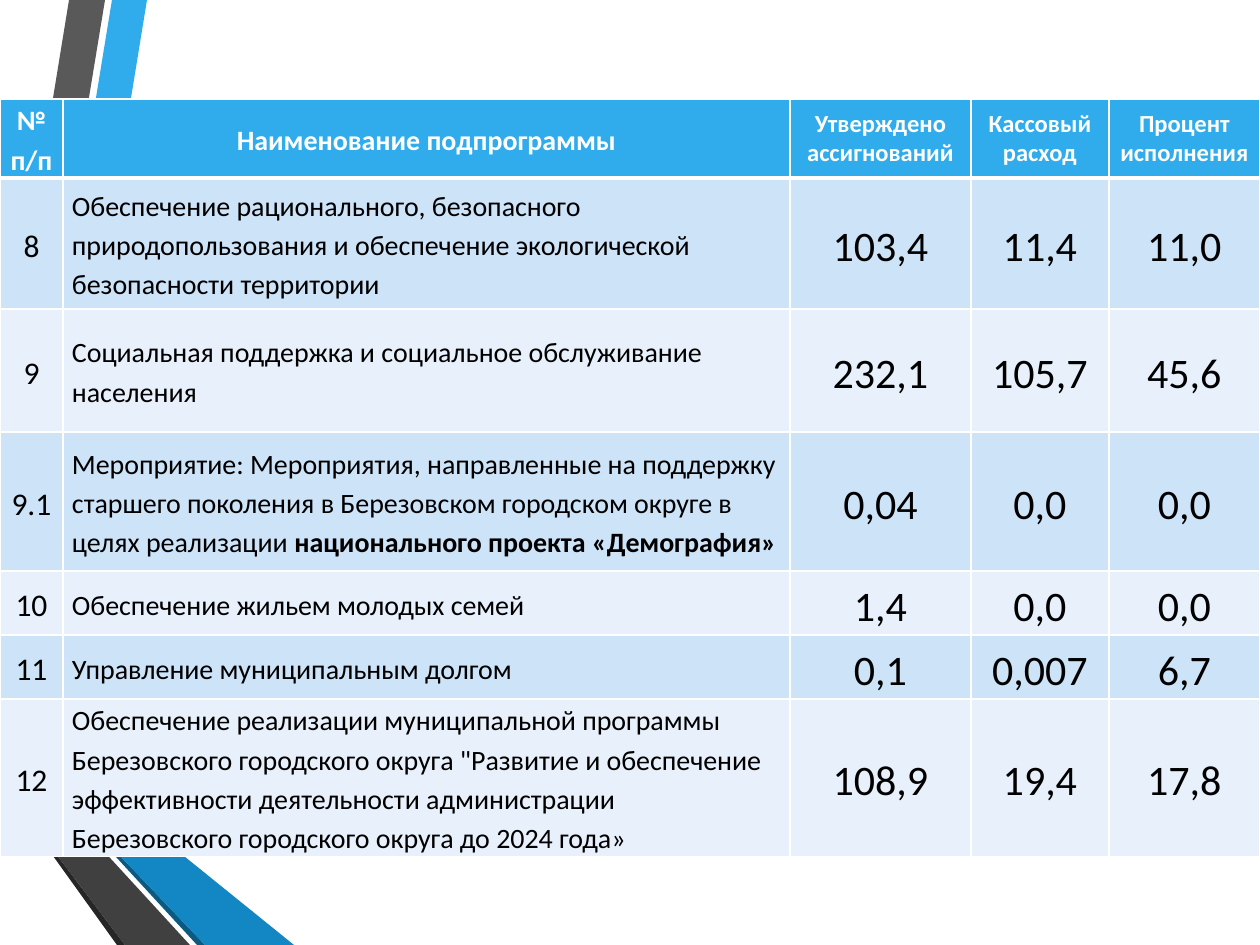
import pptx
import pptx.dml.color
import pptx.enum.text
import pptx.oxml
import pptx.oxml.ns
import pptx.util

PX = 914400 / 126
WHITE, BLACK, BLUE = "FFFFFF", "000000", "30ACEC"
BANDS = ["CDE3F8", "E8F1FB"]
COLUMNS = [63, 727, 181, 138, 151]
ROWS = [79, 131, 123, 139, 64, 64, 157]
HEADER = ["№ п/п", "Наименование подпрограммы", "Утверждено ассигнований",
          "Кассовый расход", "Процент исполнения"]
HEADER_SIZES = [16, 16, 14, 14, 14]
BODY_SIZES = [18, 16, 24, 24, 24]
PROJECT = "национального проекта «Демография»"
PROGRAMMES = [
    ["8", "Обеспечение рационального, безопасного природопользования и обеспечение "
     "экологической безопасности территории", "103,4", "11,4", "11,0"],
    ["9", "Социальная поддержка и социальное обслуживание населения",
     "232,1", "105,7", "45,6"],
    ["9.1", "Мероприятие: Мероприятия, направленные на поддержку старшего поколения "
     "в Березовском городском округе в целях реализации " + PROJECT,
     "0,04", "0,0", "0,0"],
    ["10", "Обеспечение жильем молодых семей", "1,4", "0,0", "0,0"],
    ["11", "Управление муниципальным долгом", "0,1", "0,007", "6,7"],
    ["12", "Обеспечение реализации муниципальной программы Березовского городского "
     "округа \"Развитие и обеспечение эффективности деятельности администрации "
     "Березовского городского округа до 2024 года»", "108,9", "19,4", "17,8"],
]
STRIPES = [
    (BLUE, [(0, 685), (0, 724), (28, 730), (147, 0), (112, 0)]),
    ("595959", [(105, 0), (69, 0), (0, 423), (0, 638)]),
    ("262626", [(0, 780), (0, 782), (117, 945), (125, 945)]),
    ("0C5A82", [(0, 730), (0, 731), (197, 945), (205, 945)]),
    ("1287C3", [(0, 730), (205, 945), (294, 945), (28, 730), (0, 724)]),
    ("404040", [(0, 780), (125, 945), (190, 945), (0, 738)]),
]


def px(n):
    """Turn pixels into EMU."""
    return pptx.util.Emu(round(n * PX))


def rgb(color):
    """Return the colour of a hex string."""
    return pptx.dml.color.RGBColor.from_string(color)


def add_stripe(s, color, points):
    """Draw a filled polygon."""
    builder = s.shapes.build_freeform(*points[0], scale=PX)
    builder.add_line_segments(points[1:], close=True)
    sp = builder.convert_to_shape()
    sp.shadow.inherit = False
    sp.fill.solid()
    sp.fill.fore_color.rgb = rgb(color)
    sp.line.fill.background()


def add_run(p, text, size=16, color=BLACK, bold=False):
    """Append a formatted run to a paragraph."""
    r = p.add_run()
    r.text = text
    r.font.name = "Calibri"
    r.font.size = pptx.util.Pt(size)
    r.font.bold = bold
    r.font.color.rgb = rgb(color)


def set_borders(cell, top=1, bottom=1):
    """Give a cell white borders with widths in points."""
    tc_pr = cell._tc.get_or_add_tcPr()
    widths = {"L": 1, "R": 1, "T": top, "B": bottom}
    for i, (side, width) in enumerate(widths.items()):
        tc_pr.insert(i, pptx.oxml.parse_xml(
            f'<a:ln{side} {pptx.oxml.ns.nsdecls("a")} w="{pptx.util.Pt(width)}">'
            f'<a:solidFill><a:srgbClr val="{WHITE}"/></a:solidFill></a:ln{side}>'))


def format_cell(cell, fill, centered=True, spacing=1.15):
    """Set fill, margins and alignment of a cell and return its paragraph."""
    cell.fill.solid()
    cell.fill.fore_color.rgb = rgb(fill)
    cell.margin_left = cell.margin_right = px(9)
    cell.margin_top = cell.margin_bottom = 0
    cell.vertical_anchor = pptx.enum.text.MSO_ANCHOR.MIDDLE
    p = cell.text_frame.paragraphs[0]
    align = pptx.enum.text.PP_ALIGN
    p.alignment = align.CENTER if centered else align.LEFT
    p.line_spacing = spacing
    return p


def fill_header(table):
    """Write the header row."""
    for c, (text, size) in enumerate(zip(HEADER, HEADER_SIZES)):
        cell = table.cell(0, c)
        p = format_cell(cell, BLUE, spacing=1.15 if c < 2 else 1.0)
        add_run(p, text, size=size, color=WHITE, bold=True)
        set_borders(cell, bottom=3)


def fill_body(table):
    """Write the programme rows in alternating bands."""
    for i, values in enumerate(PROGRAMMES):
        for c, (text, size) in enumerate(zip(values, BODY_SIZES)):
            cell = table.cell(i + 1, c)
            p = format_cell(cell, BANDS[i % 2], centered=c != 1)
            plain, project, _ = text.partition(PROJECT)
            add_run(p, plain, size=size)
            if project:
                add_run(p, project, size=size, bold=True)
            set_borders(cell, top=1 if i else 3)


def add_budget_table(s):
    """Add the table of programmes."""
    table = s.shapes.add_table(len(ROWS), len(COLUMNS), 0, px(99),
                               px(sum(COLUMNS)), px(sum(ROWS))).table
    for column, width in zip(table.columns, COLUMNS):
        column.width = px(width)
    for row, height in zip(table.rows, ROWS):
        row.height = px(height)
    fill_header(table)
    fill_body(table)


def main():
    """Build and save the slide."""
    prs = pptx.Presentation()
    prs.slide_width, prs.slide_height = px(1260), px(945)
    s = prs.slides.add_slide(prs.slide_layouts[6])
    for color, points in STRIPES:
        add_stripe(s, color, points)
    add_budget_table(s)
    prs.save("out.pptx")


if __name__ == "__main__":
    main()
